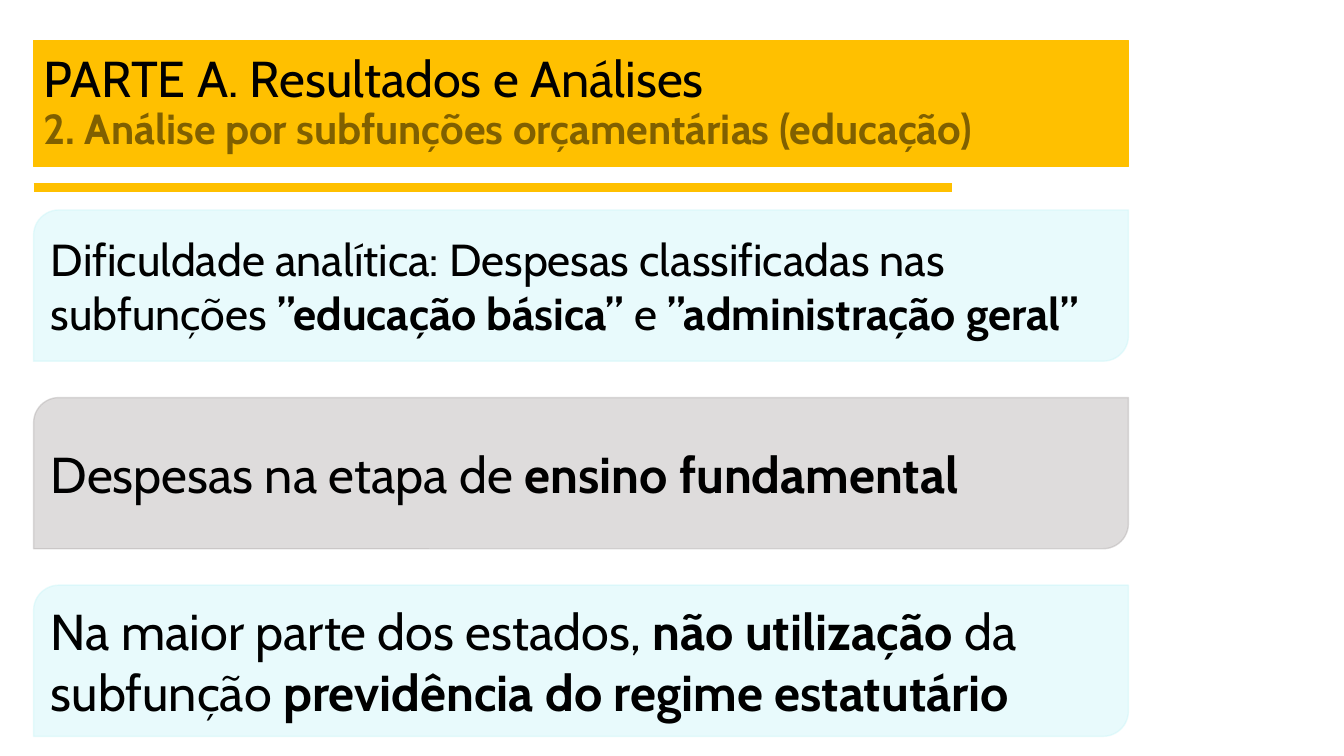
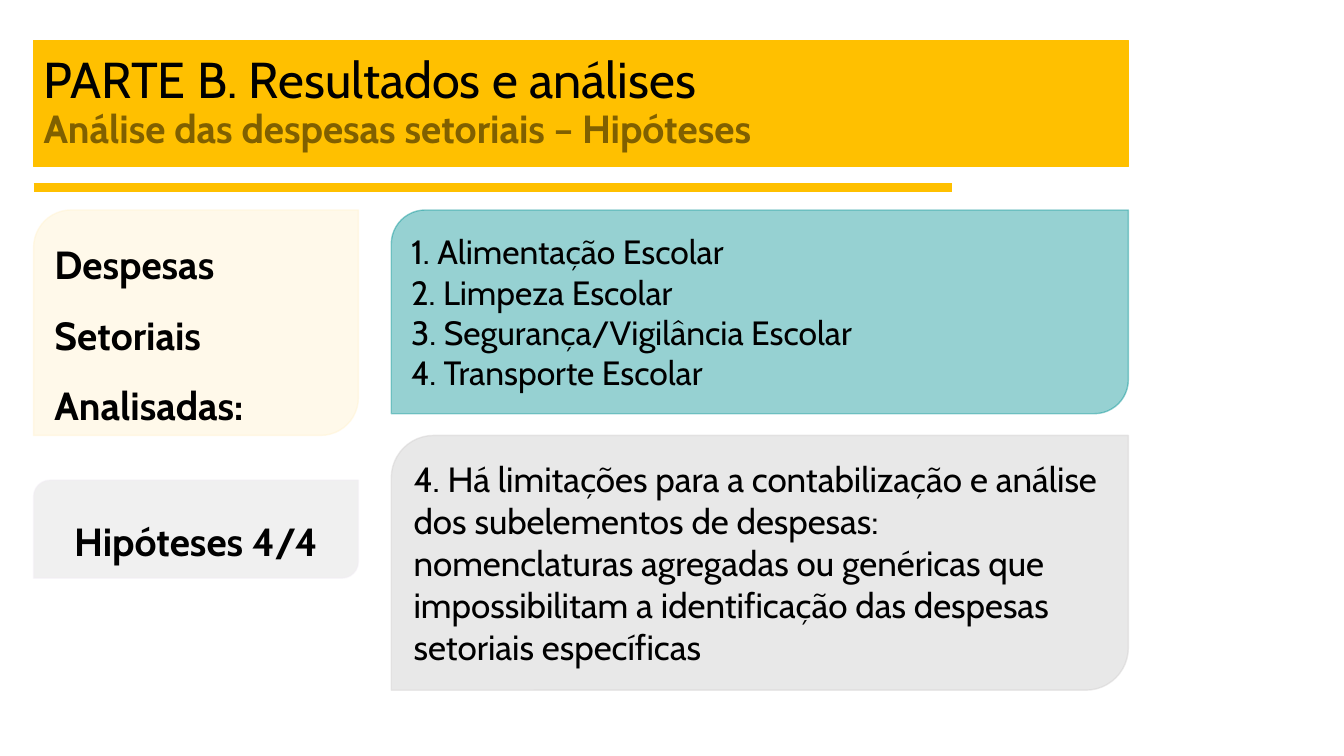
from lxml.etree import SubElement
from pptx import Presentation
from pptx.dml.color import RGBColor
from pptx.enum.shapes import MSO_CONNECTOR as CONNECTOR, MSO_SHAPE as SHAPE
from pptx.enum.text import MSO_ANCHOR as ANCHOR, PP_ALIGN as ALIGN
from pptx.oxml.ns import qn
from pptx.util import Pt

FONT = "Cabin"
BLACK, GOLD, BROWN = "000000", "FFC000", "806000"
ICE, ASH = "C8F5F8", "AFABAB"
CREAM, TEAL, SILVER, FOG = "FFF2CC", "009193", "C9C9C9", "DBDBDB"
LEFT, RIGHT, BODY_TOP = 24, 806, 150
OPACITY = 41


def color(hex_code):
    """Turn a hex string into a colour."""
    return RGBColor.from_string(hex_code)


def write(shape, text, size, ink=BLACK, bold=False, align=ALIGN.LEFT,
          spacing=1.0, before=0, after=0):
    """Add one paragraph per line; text between ** marks is bold."""
    frame = shape.text_frame
    for line in text.split("\n"):
        first = frame.paragraphs[0]
        paragraph = frame.add_paragraph() if first.runs else first
        paragraph.alignment = align
        paragraph.line_spacing = spacing
        paragraph.space_before, paragraph.space_after = Pt(before), Pt(after)
        for index, part in enumerate(line.split("**")):
            if part:
                run = paragraph.add_run()
                run.text = part
                run.font.name, run.font.size = FONT, Pt(size)
                run.font.bold = bold or index % 2 == 1
                run.font.color.rgb = color(ink)


def add_panel(slide, box, fill, edge=None, preset=SHAPE.ROUND_2_DIAG_RECTANGLE,
              opacity=OPACITY, edge_width=1):
    """Draw a filled panel in box, ready for text."""
    panel = slide.shapes.add_shape(preset, *map(Pt, box))
    panel.shadow.inherit = False
    panel.fill.solid()
    panel.fill.fore_color.rgb = color(fill)
    panel.line.color.rgb = color(edge or fill)
    panel.line.width = Pt(edge_width)
    if opacity < 100:
        for tone in panel._element.spPr.iter(qn("a:srgbClr")):
            SubElement(tone, qn("a:alpha")).set("val", str(opacity * 1000))
    panel.text_frame.word_wrap = True
    panel.text_frame.vertical_anchor = ANCHOR.MIDDLE
    return panel


def add_header(slide, part, topic, topic_size):
    """Draw the gold title band and the rule below it."""
    band = add_panel(slide, (LEFT, 29, RIGHT - LEFT, 90), GOLD,
                     preset=SHAPE.RECTANGLE, opacity=100, edge_width=0.75)
    write(band, part, 36, spacing=0.9)
    write(band, topic, topic_size, BROWN, bold=True, spacing=0.9)
    rule = slide.shapes.add_connector(CONNECTOR.STRAIGHT, Pt(LEFT), Pt(134), Pt(680), Pt(134))
    rule.line.color.rgb = color(GOLD)
    rule.line.width = Pt(6)
    SubElement(rule._element.spPr, qn("a:effectLst"))


def add_findings(slide, box, findings, gap=26):
    """Stack equal panels, one for each finding, in box."""
    left, top, width, height = box
    panel_height = (height - gap * (len(findings) - 1)) / len(findings)
    for row, (text, size, fill) in enumerate(findings):
        panel_top = top + row * (panel_height + gap)
        panel = add_panel(slide, (left, panel_top, width, panel_height), fill)
        write(panel, text, size, before=12, after=12)


def add_labels(slide, box):
    """Draw the two bold labels in the left column."""
    left, top, width, height = box
    expenses = add_panel(slide, (left, top, width, 161), CREAM)
    write(expenses, "Despesas Setoriais Analisadas:", 28, bold=True, spacing=1.5, before=12)
    hypotheses = add_panel(slide, (left, top + height - 70, width, 70), FOG, "F1ECF4")
    write(hypotheses, "Hipóteses 4/4", 28, bold=True, align=ALIGN.CENTER,
          spacing=1.5, before=12)


def add_details(slide, box):
    """Draw the list of expenses and the hypothesis in the right column."""
    left, top, width, height = box
    list_height, gap = 145.5, 15.5
    expenses = add_panel(slide, (left, top, width, list_height), TEAL)
    write(expenses, "1. Alimentação Escolar\n2. Limpeza Escolar\n"
                    "3. Segurança/Vigilância Escolar\n4. Transporte Escolar", 24)
    offset = list_height + gap
    hypothesis = add_panel(slide, (left, top + offset, width, height - offset),
                           SILVER, "D0CECE")
    write(hypothesis, "4. Há limitações para a contabilização e análise dos subelementos "
                      "de despesas: nomenclaturas agregadas ou genéricas que impossibilitam "
                      "a identificação das despesas setoriais específicas", 25, before=12)


def build_subfunctions(slide):
    """Build the slide on budget subfunctions."""
    add_header(slide, "PARTE A. Resultados e Análises",
               "2. Análise por subfunções orçamentárias (educação)", 30)
    add_findings(slide, (LEFT, BODY_TOP, RIGHT - LEFT, 376), [
        ("Dificuldade analítica: Despesas classificadas nas subfunções "
         "**”educação básica” **e **”administração geral”**", 32, ICE),
        ("Despesas na etapa de **ensino fundamental**", 36, ASH),
        ("Na maior parte dos estados, **não utilização **da subfunção "
         "**previdência do regime estatutário**", 36, ICE),
    ])


def build_hypotheses(slide):
    """Build the slide on sector expenses and hypotheses."""
    add_header(slide, "PARTE B. Resultados e análises",
               "Análise das despesas setoriais – Hipóteses", 28)
    add_labels(slide, (LEFT, BODY_TOP, 232, 263))
    details_left = 279.5
    add_details(slide, (details_left, BODY_TOP, RIGHT - details_left, 343))


def main():
    """Build and save the presentation."""
    deck = Presentation()
    deck.slide_width, deck.slide_height = Pt(960), Pt(540)
    for build in (build_subfunctions, build_hypotheses):
        build(deck.slides.add_slide(deck.slide_layouts[6]))
    deck.save("out.pptx")


if __name__ == "__main__":
    main()
